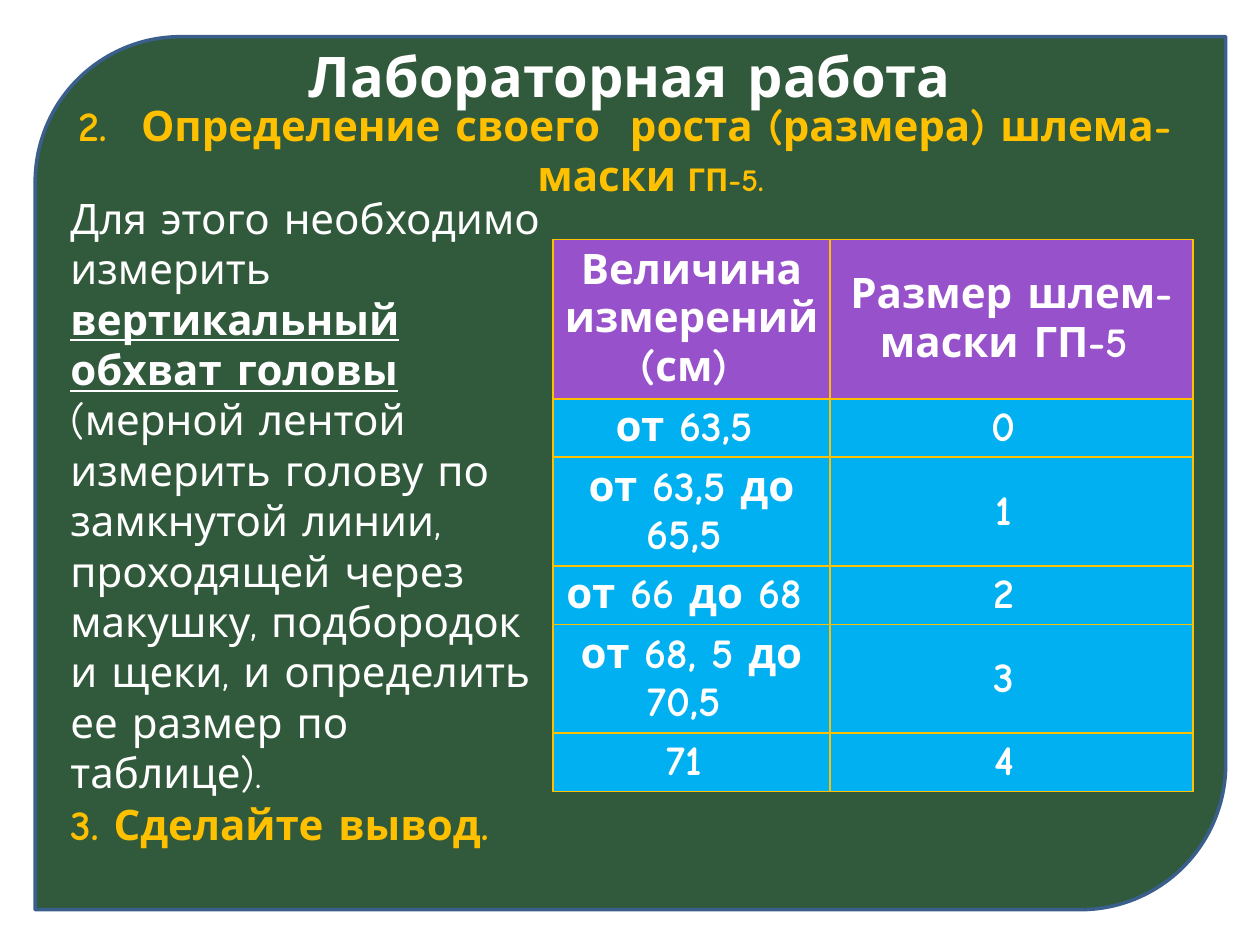
import pptx
import pptx.util
import pptx.dml.color
import pptx.enum.shapes
import pptx.enum.text
import pptx.oxml
import pptx.oxml.ns

Cm, Pt = pptx.util.Cm, pptx.util.Pt
ALIGN = pptx.enum.text.PP_ALIGN
MID = pptx.enum.text.MSO_ANCHOR.MIDDLE
TOP = pptx.enum.text.MSO_ANCHOR.TOP
GROW = pptx.enum.text.MSO_AUTO_SIZE.SHAPE_TO_FIT_TEXT
FIX = pptx.enum.text.MSO_AUTO_SIZE.NONE
WHITE, GOLD = "FFFFFF", "FFC000"


def tint(text):
    return pptx.dml.color.RGBColor.from_string(text)


def write(para, text, hue, **form):
    run = para.add_run()
    run.text = text
    run.font.color.rgb = tint(hue)
    base = {"name": "Comic Neue", "size": Pt(24), "bold": False}
    for key, val in (base | form).items():
        setattr(run.font, key, val)


deck = pptx.Presentation()
deck.slide_width, deck.slide_height = Cm(25.4), Cm(19.05)
slide = deck.slides.add_slide(deck.slide_layouts[6])

# Green board
kind = pptx.enum.shapes.MSO_SHAPE.ROUND_2_DIAG_RECTANGLE
board = slide.shapes.add_shape(kind, Cm(0.71), Cm(0.74), Cm(24), Cm(17.6))
board.shadow.inherit = False
board.fill.solid()
board.fill.fore_color.rgb = tint("31593B")
board.line.color.rgb = tint("3A5F8C")
board.line.width = Pt(2)

# Text boxes: place, frame format, alignment, runs
boxes = [
    ((1.27, -0.08, 22.86, 3.18),
     {"vertical_anchor": MID, "auto_size": FIX}, ALIGN.CENTER,
     [("Лабораторная работа", WHITE, {"size": Pt(32), "bold": True})]),
    ((1.17, 4.19, 10, 13.34),
     {"vertical_anchor": MID, "auto_size": GROW, "margin_bottom": Cm(1.9)},
     ALIGN.LEFT,
     [("Для этого необходимо измерить ", WHITE, {}),
      ("вертикальный обхват головы", WHITE,
       {"bold": True, "underline": True}),
      (" (мерной лентой измерить голову по замкнутой линии, проходящей "
       "через макушку, подбородок и щеки, и определить ее размер по "
       "таблице).", WHITE, {})]),
    ((1.09, 1.88, 23.01, 2.31),
     {"vertical_anchor": TOP, "auto_size": GROW}, ALIGN.CENTER,
     [("Определение своего  роста (размера) шлема-маски", GOLD,
       {"bold": True}),
      (" ГП-5. ", GOLD, {"size": Pt(18), "bold": True})]),
    ((1.17, 15.98, 23.6, 1.27),
     {"vertical_anchor": TOP, "auto_size": GROW}, ALIGN.LEFT,
     [("3. Сделайте вывод.", GOLD, {"bold": True})]),
]
paras = []
for place, form, align, runs in boxes:
    frame = slide.shapes.add_textbox(*map(Cm, place)).text_frame
    frame.word_wrap = True
    for key, val in form.items():
        setattr(frame, key, val)
    para = frame.paragraphs[0]
    para.alignment = align
    for text, hue, look in runs:
        write(para, text, hue, **look)
    paras.append(para)

# Numbered heading starts at 2
props = paras[2]._p.get_or_add_pPr()
props.set("marL", str(Cm(1.27)))
props.set("indent", str(-Cm(1.27)))
num = pptx.oxml.ns.nsdecls("a")
props.append(pptx.oxml.parse_xml(
    f'<a:buFont {num} typeface="+mj-lt"/>'))
props.append(pptx.oxml.parse_xml(
    f'<a:buAutoNum {num} type="arabicPeriod" startAt="2"/>'))

# Size table
rows = [
    ("Величина измерений (см) ", "Размер шлем-маски ГП-5 "),
    ("от 63,5 ", "0 "),
    ("от 63,5 до 65,5 ", "1 "),
    ("от 66 до 68 ", "2 "),
    ("от 68, 5 до 70,5 ", "3 "),
    ("71 ", "4 "),
]
high = 1.07
table = slide.shapes.add_table(len(rows), 2, Cm(11.15), Cm(4.83),
                               Cm(12.9), Cm(high * len(rows))).table
for col, wide in zip(table.columns, (5.58, 7.32)):
    col.width = Cm(wide)
sides = ("left", "right", "top", "bottom")
inset = {f"margin_{side}": Cm(0.08) for side in sides}
for r, row in enumerate(rows):
    table.rows[r].height = Cm(high)
    for c, text in enumerate(row):
        cell = table.cell(r, c)
        for key, val in (inset | {"vertical_anchor": MID}).items():
            setattr(cell, key, val)
        para = cell.text_frame.paragraphs[0]
        para.alignment = ALIGN.CENTER
        write(para, text, WHITE, bold=True)
        # Borders come before the fill in the cell properties
        edge = cell._tc.get_or_add_tcPr()
        for side in sides:
            tag = "ln" + side[0].upper()
            edge.append(pptx.oxml.parse_xml(
                f'<a:{tag} {num} w="{Pt(1)}"><a:solidFill>'
                f'<a:srgbClr val="{GOLD}"/></a:solidFill></a:{tag}>'))
        cell.fill.solid()
        cell.fill.fore_color.rgb = tint("00B0F0" if r else "9751CB")

deck.save("out.pptx")
